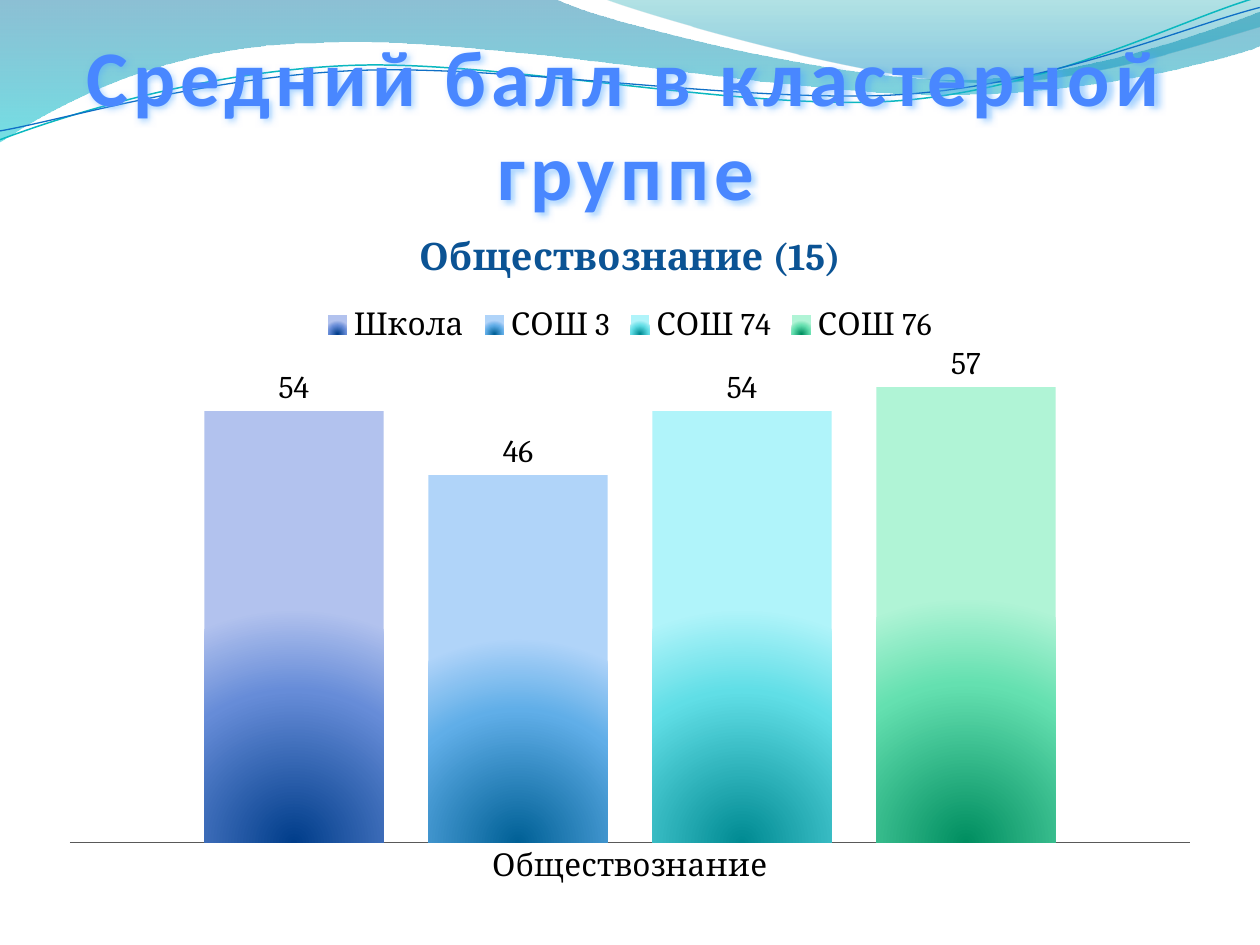
from dataclasses import dataclass
from math import cos, radians, sin

from pptx import Presentation
from pptx.chart.data import CategoryChartData
from pptx.dml.color import RGBColor
from pptx.enum.chart import XL_CHART_TYPE, XL_LABEL_POSITION, XL_LEGEND_POSITION, XL_TICK_MARK
from pptx.enum.text import MSO_ANCHOR, PP_ALIGN
from pptx.oxml import parse_xml
from pptx.oxml.ns import nsdecls
from pptx.util import Inches, Pt


@dataclass(frozen=True)
class Theme:
    head_font: str = "Calibri"
    body_font: str = "Cambria"
    head_size: float = 45
    sub_size: float = 21.6
    body_size: float = 18
    ink: str = "000000"
    sub: str = "0B5394"
    axis: str = "595959"
    edge: str = "F4F5FA"
    text: str = "4987FF"
    glow: str = "50A8FF"
    head: tuple = ((10, "4987FF", 100), (75, "00539E", 100))
    wave: tuple = ((0, "0074A1", 45), (100, "00C6CF", 55))
    crest: tuple = ((0, "00A1A9", 30), (80, "008BBF", 45))
    teal: str = "0AB8BF"
    blue: str = "0F6FC6"


THEME = Theme()
TILT = -2.7
LINEAR = '<a:lin ang="5400000" scaled="1"/>'
RADIAL = '<a:path path="circle"><a:fillToRect l="50000" t="100000" r="50000"/></a:path>'

WAVE = ((0, -0.01), [
    (4.4, -0.01), (4.76, 0.17, 6.64, 0.63, 7.58, 0.63), (8.53, 0.63, 9.58, 0.26, 10, 0.09),
    (10.01, 0.36), (9.83, 0.44, 8.7, 0.76, 7.46, 0.75), (6.22, 0.75, 3.82, 0.28, 2.57, 0.34),
    (1.29, 0.35, 0.46, 0.83, -0.01, 1.13), (0, -0.01)])
CREST = ((4.79, -0.01), [
    (5.09, 0.11, 6.82, 0.62, 7.69, 0.65), (8.56, 0.69, 9.61, 0.32, 10, 0.21),
    (10, 0), (4.79, -0.01)])
UPPER = ((0, 1.11), [
    (0.48, 0.93, 1.58, 0.57, 2.77, 0.52), (3.95, 0.47, 5.93, 0.89, 7.13, 0.8),
    (8.33, 0.71, 9.38, 0.15, 9.98, -0.02)])
LOWER = ((0, 1.04), [
    (0.47, 0.96, 1.64, 0.61, 2.83, 0.56), (4.03, 0.51, 5.97, 0.83, 7.17, 0.75),
    (8.36, 0.67, 9.41, 0.21, 10, 0.06)])

SCHOOLS = [
    ("Школа", 54, ("003D8A", "668CD8", "B2C2EE")),
    ("СОШ 3", 46, ("006096", "60AEE8", "B0D4F9")),
    ("СОШ 74", 54, ("008A92", "60DEE6", "B0F4FA")),
    ("СОШ 76", 57, ("008E60", "64E0B0", "B0F4D6")),
]


def color(code):
    return RGBColor.from_string(code)


def make_xml(tag, body="", attrs=""):
    return parse_xml(f"<a:{tag} {nsdecls('a')} {attrs}>{body}</a:{tag}>")


def blend(parent, fill, stops, shade):
    fill.solid()
    marks = "".join(
        f'<a:gs pos="{pos * 1000}"><a:srgbClr val="{code}">'
        f'<a:alpha val="{alpha * 1000}"/></a:srgbClr></a:gs>'
        for pos, code, alpha in stops)
    solid = parent.find("{*}solidFill")
    parent.replace(solid, make_xml("gradFill", f"<a:gsLst>{marks}</a:gsLst>{shade}", 'rotWithShape="1"'))


def turn(point, hub, angle):
    x, y = point[0] - hub[0], point[1] - hub[1]
    c, s = cos(radians(angle)), sin(radians(angle))
    return hub[0] + x * c - y * s, hub[1] + x * s + y * c


def bend(shape, steps):
    track = shape._element.spPr.find(".//{*}pathLst")[0]
    lines = iter(track.findall("{*}lnTo"))
    for step in steps:
        first = next(lines)
        if len(step) == 6:
            curve = make_xml("cubicBezTo")
            track.replace(first, curve)
            curve.append(first[0])
            for _ in range(2):
                line = next(lines)
                curve.append(line[0])
                track.remove(line)


def draw_path(slide, outline, closed, tilt=0):
    start, steps = outline
    points = [start] + [step[i:i + 2] for step in steps for i in range(0, len(step), 2)]
    hub = [(min(side) + max(side)) / 2 for side in zip(*points)]
    spots = [tuple(Inches(v) for v in turn(point, hub, -tilt)) for point in points]
    pen = slide.shapes.build_freeform(*spots[0])
    pen.add_line_segments(spots[1:], close=closed)
    shape = pen.convert_to_shape()
    shape.rotation = tilt % 360
    shape.shadow.inherit = False
    bend(shape, steps)
    return shape


def add_wave(slide, outline, stops):
    shape = draw_path(slide, outline, True)
    blend(shape._element.spPr, shape.fill, stops, LINEAR)
    shape.line.fill.background()


def add_curve(slide, outline, code, width):
    shape = draw_path(slide, outline, False, TILT)
    shape.fill.background()
    shape.line.color.rgb = color(code)
    shape.line.width = Pt(width)


def set_font(font, name, size, code, bold=False):
    font.name, font.size, font.bold = name, Pt(size), bold
    font.color.rgb = color(code)


def add_title(slide, text):
    box = slide.shapes.add_textbox(Inches(0.47), Inches(0.47), Inches(9), Inches(1.25))
    frame = box.text_frame
    frame.word_wrap = True
    frame.vertical_anchor = MSO_ANCHOR.BOTTOM
    frame.margin_left = frame.margin_right = frame.margin_bottom = 0
    frame.margin_top = Inches(0.05)
    para = frame.paragraphs[0]
    para.alignment = PP_ALIGN.CENTER
    run = para.add_run()
    run.text = text
    set_font(run.font, THEME.head_font, THEME.head_size, THEME.text, True)
    props = run._r.get_or_add_rPr()
    props.set("spc", "300")
    blend(props, run.font.fill, THEME.head, LINEAR)
    edge = f'<a:solidFill><a:srgbClr val="{THEME.edge}"/></a:solidFill>'
    props.insert(0, make_xml("ln", edge, f'w="{Pt(0.9)}"'))
    glow = (f'<a:outerShdw blurRad="{Pt(3)}" dist="{Pt(1.5)}" dir="2700000">'
            f'<a:srgbClr val="{THEME.glow}"><a:alpha val="50000"/></a:srgbClr></a:outerShdw>')
    box._element.spPr.append(make_xml("effectLst", glow))


def style_axes(chart):
    base, scale = chart.category_axis, chart.value_axis
    base.major_tick_mark = base.minor_tick_mark = XL_TICK_MARK.NONE
    base.format.line.color.rgb = color(THEME.axis)
    base.format.line.width = Pt(0.75)
    scale.has_major_gridlines = False
    scale.minimum_scale, scale.maximum_scale = 0, 60
    scale.visible = False


def style_bars(chart):
    plot = chart.plots[0]
    plot.gap_width, plot.overlap = 150, -25
    plot.vary_by_categories = False
    for bar, (_, _, shades) in zip(plot.series, SCHOOLS):
        stops = [(pos, code, 100) for pos, code in zip((0, 65, 100), shades)]
        blend(bar._element.get_or_add_spPr(), bar.format.fill, stops, RADIAL)
        labels = bar.data_labels
        labels.show_value = True
        labels.position = XL_LABEL_POSITION.OUTSIDE_END
        set_font(labels.font, THEME.body_font, THEME.body_size, THEME.ink)


def add_scores(slide, topic, count):
    data = CategoryChartData()
    data.categories = [topic]
    for name, score, _ in SCHOOLS:
        data.add_series(name, [score])
    chart = slide.shapes.add_chart(
        XL_CHART_TYPE.COLUMN_CLUSTERED, Inches(0.37), Inches(1.62),
        Inches(9.26), Inches(5.51), data).chart
    set_font(chart.font, THEME.body_font, THEME.body_size, THEME.ink)
    chart.has_title = True
    run = chart.chart_title.text_frame.paragraphs[0].add_run()
    run.text = f"{topic} ({count})"
    set_font(run.font, THEME.body_font, THEME.sub_size, THEME.sub, True)
    chart.has_legend = True
    chart.legend.position = XL_LEGEND_POSITION.TOP
    chart.legend.include_in_layout = False
    style_axes(chart)
    style_bars(chart)


def main():
    deck = Presentation()
    deck.slide_width, deck.slide_height = Inches(10), Inches(7.5)
    slide = deck.slides.add_slide(deck.slide_layouts[6])
    add_wave(slide, WAVE, THEME.wave)
    add_wave(slide, CREST, THEME.crest)
    add_curve(slide, UPPER, THEME.teal, 0.85)
    add_curve(slide, LOWER, THEME.blue, 0.75)
    add_title(slide, "Средний балл в кластерной группе")
    add_scores(slide, "Обществознание", 15)
    deck.save("out.pptx")


if __name__ == "__main__":
    main()
